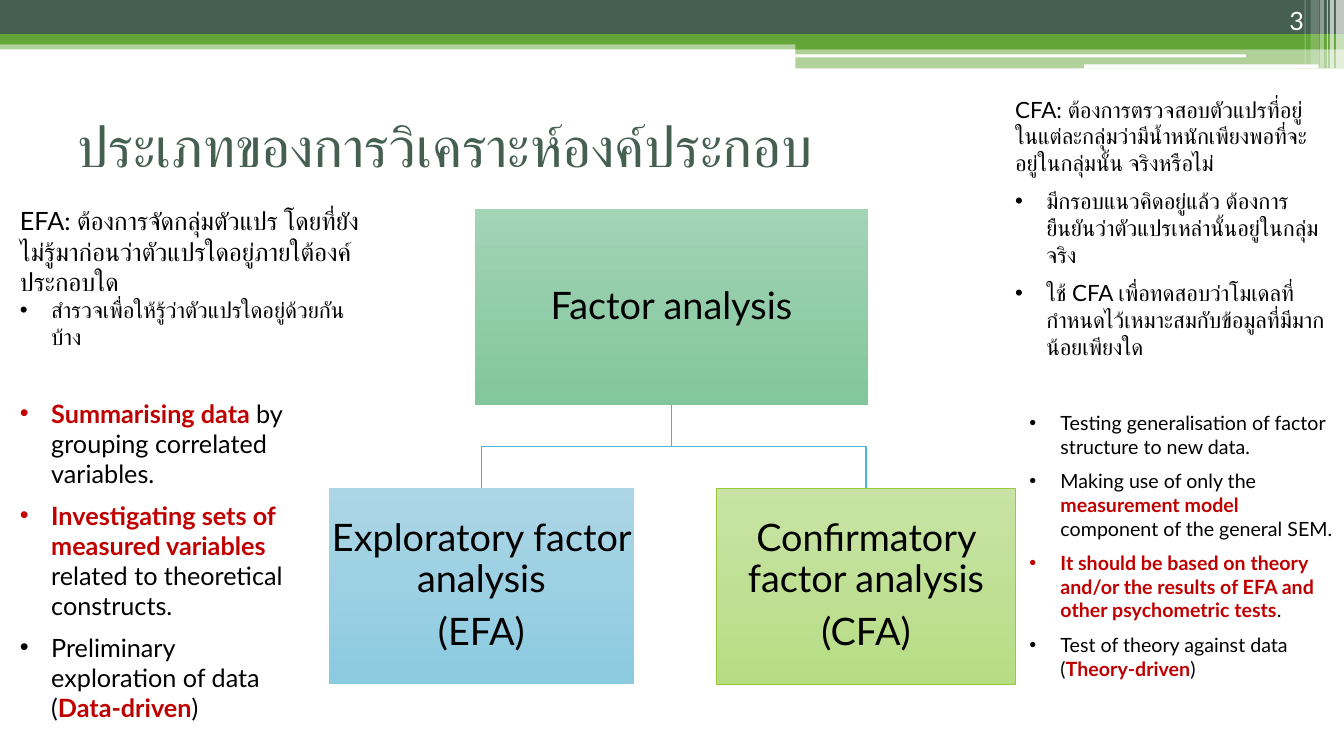
from lxml import etree
from pptx import Presentation
from pptx.dml.color import RGBColor
from pptx.enum.shapes import MSO_SHAPE
from pptx.enum.text import MSO_ANCHOR, MSO_AUTO_SIZE, PP_ALIGN
from pptx.oxml.ns import qn
from pptx.util import Inches, Pt

RECTANGLE, ROUNDED = MSO_SHAPE.RECTANGLE, MSO_SHAPE.ROUNDED_RECTANGLE
TOP, MIDDLE, BOTTOM = MSO_ANCHOR.TOP, MSO_ANCHOR.MIDDLE, MSO_ANCHOR.BOTTOM
LEFT, CENTER, RIGHT = PP_ALIGN.LEFT, PP_ALIGN.CENTER, PP_ALIGN.RIGHT
GROW = MSO_AUTO_SIZE.SHAPE_TO_FIT_TEXT

FONT = "Lato"
WHITE = RGBColor(0xFF, 0xFF, 0xFF)
BLACK = RGBColor(0x00, 0x00, 0x00)
RED = RGBColor(0xC0, 0x00, 0x00)
DARK_GREEN = RGBColor(0x45, 0x5F, 0x51)
GREEN = RGBColor(0x63, 0xA5, 0x37)
BRANCH_BLUE = RGBColor(0x4E, 0xB3, 0xCF)
LIME_EDGE = RGBColor(0x99, 0xCB, 0x38)
MINT = (RGBColor(0xA2, 0xD4, 0xB5), RGBColor(0x82, 0xC6, 0x9C))
SKY = (RGBColor(0xAC, 0xD6, 0xE6), RGBColor(0x8C, 0xCA, 0xE0))
LIME = (RGBColor(0xC8, 0xE3, 0xA5), RGBColor(0xB7, 0xDD, 0x84))

SLIDE_WIDTH, SLIDE_HEIGHT = 13.33, 7.5
HANGING_INDENT = 0.31


def add_box(slide, box, kind=RECTANGLE):
    shape = slide.shapes.add_shape(kind, *(Inches(value) for value in box))
    shape.shadow.inherit = False
    shape.line.fill.background()
    return shape


def add_band(slide, box, color, opacity=100, kind=RECTANGLE):
    band = add_box(slide, box, kind)
    band.fill.solid()
    band.fill.fore_color.rgb = color
    if opacity < 100:
        fill_color = band.element.spPr.find(qn("a:solidFill"))[0]
        etree.SubElement(fill_color, qn("a:alpha")).set("val", str(opacity * 1000))


def format_runs(paragraph, size, color, bold=None):
    for run in paragraph.runs:
        run.font.name = FONT
        run.font.size = Pt(size)
        run.font.color.rgb = color
        run.font.bold = bold


def add_bullet(paragraph):
    properties = paragraph._p.get_or_add_pPr()
    properties.set("marL", str(Inches(HANGING_INDENT)))
    properties.set("indent", str(-Inches(HANGING_INDENT)))
    etree.SubElement(properties, qn("a:buFont")).set("typeface", "Arial")
    etree.SubElement(properties, qn("a:buChar")).set("char", "•")


def add_text_box(slide, box, anchor=TOP):
    text_box = slide.shapes.add_textbox(*(Inches(value) for value in box))
    text_frame = text_box.text_frame
    text_frame.word_wrap = True
    text_frame.vertical_anchor = anchor
    return text_frame


def add_label(slide, box, text, size, color, anchor, alignment):
    text_frame = add_text_box(slide, box, anchor)
    text_frame.text = text
    paragraph = text_frame.paragraphs[0]
    paragraph.alignment = alignment
    format_runs(paragraph, size, color)


def add_notes_column(slide, box, items, gap=8):
    """Items are (text, size, bulleted); words between asterisks are stressed."""
    text_frame = add_text_box(slide, box)
    text_frame.auto_size = GROW
    for index, (text, size, bulleted) in enumerate(items):
        paragraph = text_frame.add_paragraph() if index else text_frame.paragraphs[0]
        paragraph.space_after = Pt(gap)
        if bulleted:
            add_bullet(paragraph)
        for part_index, part in enumerate(text.split("*")):
            if part:
                run = paragraph.add_run()
                run.text = part
                stressed = part_index % 2 == 1
                run.font.name = FONT
                run.font.size = Pt(size)
                run.font.bold = stressed
                run.font.color.rgb = RED if stressed else BLACK


def add_header(slide, width):
    half = width - 5.44
    # Full-width bands, then the stepped bands on the right
    add_band(slide, (0, 0.4, width, 0.09), GREEN, 50)
    add_band(slide, (0, 0, width, 0.34), DARK_GREEN)
    add_band(slide, (0, 0.34, width, 0.1), GREEN)
    add_band(slide, (half, 0.39, 5.44, 0.1), GREEN)
    add_band(slide, (half, 0.48, 5.44, 0.2), GREEN, 50)
    add_band(slide, (half, 0.54, 4.47, 0.03), WHITE, kind=ROUNDED)
    add_band(slide, (10.75, 0.64, 2.33, 0.04), WHITE, kind=ROUNDED)
    # Translucent stripes: distance from right edge, width, height, opacity
    for offset, stripe, height, opacity in (
        (0.08, 0.08, 0.68, 65), (0.14, 0.04, 0.68, 65), (0.17, 0.01, 0.68, 60),
        (0.24, 0.04, 0.68, 40), (0.33, 0.08, 0.64, 20), (0.39, 0.01, 0.64, 30),
    ):
        add_band(slide, (width - offset, 0, stripe, height), WHITE, opacity)
    add_label(slide, (11.92, 0, 1.11, 0.4), "3", 18, WHITE, BOTTOM, RIGHT)


def add_node(slide, box, lines, colors, edge=None):
    node = add_box(slide, box)
    node.fill.gradient()
    node.fill.gradient_angle = 270
    for stop, color in zip(node.fill.gradient_stops, colors):
        stop.color.rgb = color
    if edge is not None:
        node.line.color.rgb = edge
        node.line.width = Pt(0.5)
    text_frame = node.text_frame
    text_frame.word_wrap = True
    text_frame.vertical_anchor = MIDDLE
    text_frame.margin_left = text_frame.margin_right = Inches(0.02)
    text_frame.margin_top = text_frame.margin_bottom = Inches(0.02)
    text_frame.text = "\n".join(lines)
    for paragraph in text_frame.paragraphs:
        paragraph.alignment = CENTER
        paragraph.line_spacing = 0.9
        paragraph.space_after = Pt(9)
        format_runs(paragraph, 27, BLACK)


def add_branch(slide, start, end):
    (start_x, start_y), (end_x, end_y) = start, end
    middle_y = (start_y + end_y) / 2
    builder = slide.shapes.build_freeform(Inches(start_x), Inches(start_y))
    corners = ((start_x, middle_y), (end_x, middle_y), (end_x, end_y))
    builder.add_line_segments([(Inches(x), Inches(y)) for x, y in corners], close=False)
    branch = builder.convert_to_shape()
    branch.shadow.inherit = False
    branch.fill.background()
    branch.line.color.rgb = BRANCH_BLUE
    branch.line.width = Pt(1)


def add_tree(slide, box):
    left, top, width, height = box
    node_height = 1.95
    child_top = top + height - node_height
    root = (left + 1.45, top, 3.9, node_height)
    exploratory = (left, child_top, 3.03, node_height)
    confirmatory = (left + width - 2.96, child_top, 2.96, node_height)
    root_bottom = (root[0] + root[2] / 2, top + node_height)
    for child in (confirmatory, exploratory):
        add_branch(slide, root_bottom, (child[0] + child[2] / 2, child_top))
    add_node(slide, root, ["Factor analysis"], MINT)
    add_node(slide, exploratory, ["Exploratory factor analysis", "(EFA)"], SKY)
    add_node(slide, confirmatory, ["Confirmatory factor analysis", "(CFA)"], LIME, LIME_EDGE)


def add_exploratory_notes(slide, left):
    add_notes_column(slide, (left, 1.99, 3.63, 1.55), [
        ("EFA: ต้องการจัดกลุ่มตัวแปร โดยที่ยังไม่รู้มาก่อนว่าตัวแปรใดอยู่ภายใต้องค์ประกอบใด", 18, False),
        ("สำรวจเพื่อให้รู้ว่าตัวแปรใดอยู่ด้วยกันบ้าง", 16, True),
    ], gap=0)
    add_notes_column(slide, (left, 3.9, 3, 3.35), [
        ("*Summarising data *by grouping correlated variables.", 18, True),
        ("*Investigating sets of measured variables *related to theoretical constructs.", 18, True),
        ("Preliminary exploration of data (*Data-driven*)", 18, True),
    ])


def add_confirmatory_notes(slide, left):
    add_notes_column(slide, (left, 0.9, 3.27, 2.75), [
        ("CFA: ต้องการตรวจสอบตัวแปรที่อยู่ในแต่ละกลุ่มว่ามีน้ำหนักเพียงพอที่จะอยู่ในกลุ่มนั้น จริงหรือไม่", 16, False),
        ("มีกรอบแนวคิดอยู่แล้ว ต้องการยืนยันว่าตัวแปรเหล่านั้นอยู่ในกลุ่มจริง", 16, True),
        ("ใช้ CFA เพื่อทดสอบว่าโมเดลที่กำหนดไว้เหมาะสมกับข้อมูลที่มีมากน้อยเพียงใด", 16, True),
    ])
    add_notes_column(slide, (left + 0.14, 4.03, 3.22, 3.26), [
        ("Testing generalisation of factor structure to new data.", 14, True),
        ("Making use of only the *measurement model *component of the general SEM.", 14, True),
        ("*It should be based on theory and/or the results of EFA and other psychometric tests*.", 14, True),
        ("Test of theory against data (*Theory-driven*)", 14, True),
    ])


def main():
    presentation = Presentation()
    presentation.slide_width = Inches(SLIDE_WIDTH)
    presentation.slide_height = Inches(SLIDE_HEIGHT)
    slide = presentation.slides.add_slide(presentation.slide_layouts[6])
    add_header(slide, SLIDE_WIDTH)
    add_label(slide, (0.67, 0.85, 12, 1.17), "ประเภทของการวิเคราะห์องค์ประกอบ",
              40, DARK_GREEN, MIDDLE, LEFT)
    add_tree(slide, (3.26, 2.07, 6.81, 4.72))
    add_exploratory_notes(slide, 0.1)
    add_confirmatory_notes(slide, 9.97)
    presentation.save("out.pptx")


if __name__ == "__main__":
    main()
